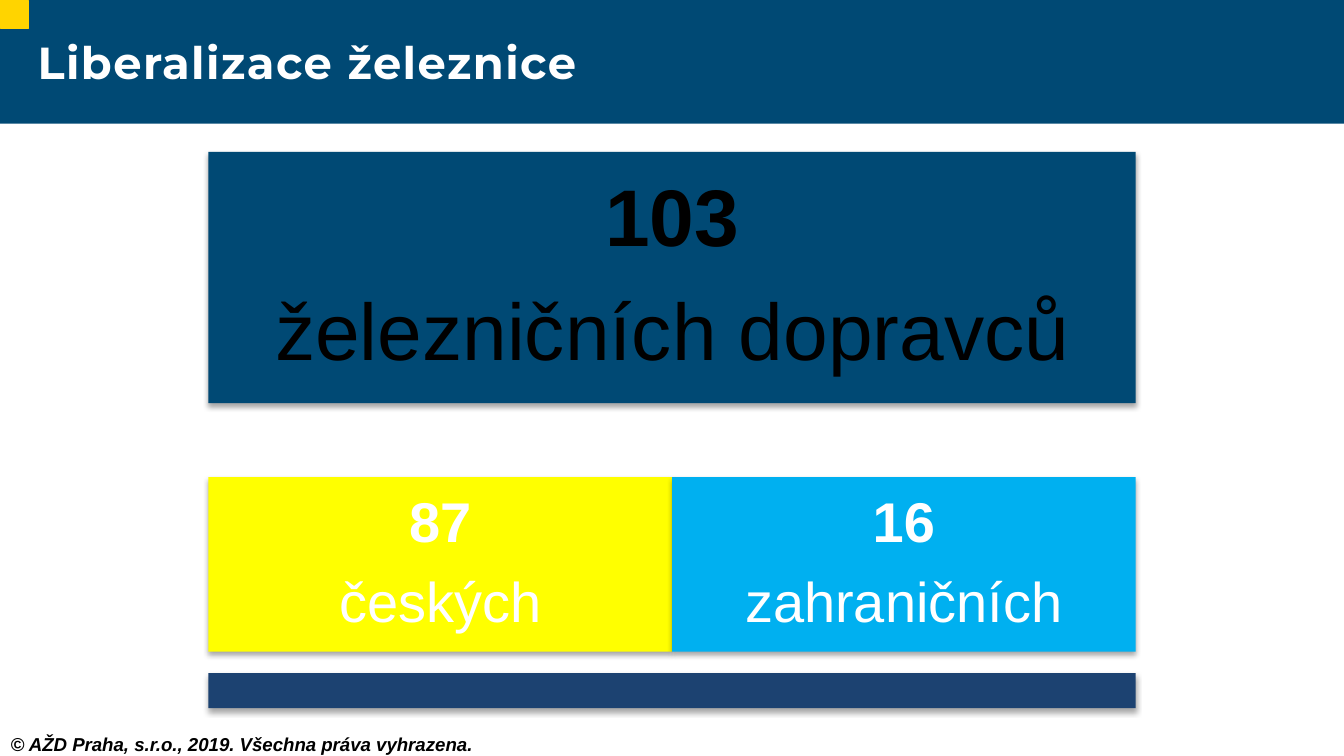
from dataclasses import dataclass

from lxml import etree
from pptx import Presentation
from pptx.dml.color import RGBColor
from pptx.enum.shapes import MSO_SHAPE
from pptx.enum.text import MSO_ANCHOR, PP_ALIGN
from pptx.oxml.ns import qn
from pptx.shapes.autoshape import Shape
from pptx.slide import Slide
from pptx.util import Inches, Pt

RECTANGLE = MSO_SHAPE.RECTANGLE
PROCESS = MSO_SHAPE.FLOWCHART_PROCESS
MIDDLE = MSO_ANCHOR.MIDDLE
BOTTOM = MSO_ANCHOR.BOTTOM
CENTER = PP_ALIGN.CENTER

NAVY = "004974"
GOLD = "FFD400"
WHITE = "FFFFFF"
BLACK = "000000"

BLOCK_LEFT = 1.55
BLOCK_WIDTH = 6.9
HALF_WIDTH = BLOCK_WIDTH / 2


@dataclass(frozen=True)
class Box:
    """Position and size in inches."""

    left: float
    top: float
    width: float
    height: float

    def lengths(self) -> tuple:
        """Return the four values as lengths."""
        return tuple(Inches(value) for value in (self.left, self.top, self.width, self.height))


@dataclass(frozen=True)
class Carriers:
    """A block with a number of carriers and their kind."""

    box: Box
    fill: str
    count: str
    kind: str
    size: float
    color: str
    margin: float


@dataclass(frozen=True)
class Label:
    """A single line of text on the slide."""

    box: Box
    text: str
    font: str
    size: float
    color: str
    anchor: MSO_ANCHOR
    margins: tuple
    italic: bool = False
    spacing: float = 0


CARRIERS = (
    Carriers(Box(BLOCK_LEFT, 1.13, BLOCK_WIDTH, 1.87), NAVY,
             "103", "železničních dopravců", 43, BLACK, 0.18),
    Carriers(Box(BLOCK_LEFT, 3.55, HALF_WIDTH, 1.3), "FFFF00",
             "87", "českých", 30, WHITE, 0.12),
    Carriers(Box(BLOCK_LEFT + HALF_WIDTH, 3.55, HALF_WIDTH, 1.3), "00B0F0",
             "16", "zahraničních", 30, WHITE, 0.12),
)

LABELS = (
    Label(Box(0, 5.41, 7.67, 0.21), "© AŽD Praha, s.r.o., 2019. Všechna práva vyhrazena.",
          "Arial", 10, BLACK, BOTTOM, (0.08, 0, 0.04, 0), italic=True),
    Label(Box(0.28, 0.06, 8.5, 0.79), "Liberalizace železnice",
          "Montserrat", 24, WHITE, MIDDLE, (0, 0.04, 0.1, 0.04), spacing=0.8),
)


def color(value: str) -> RGBColor:
    """Turn a hex string into a colour."""
    return RGBColor.from_string(value)


def set_frame(shape: Shape, margins: tuple, anchor: MSO_ANCHOR) -> None:
    """Set wrapping, insets and anchor of a shape's text."""
    frame = shape.text_frame
    frame.word_wrap = True
    frame.vertical_anchor = anchor
    frame.margin_left, frame.margin_top, frame.margin_right, frame.margin_bottom = (
        Inches(margin) for margin in margins
    )


def add_run(paragraph, text: str, font: str, size: float, hex_color: str, bold: bool):
    """Add a formatted run to a paragraph."""
    run = paragraph.add_run()
    run.text = text
    run.font.name = font
    run.font.size = Pt(size)
    run.font.bold = bold
    run.font.color.rgb = color(hex_color)
    return run


def add_block(slide: Slide, box: Box, fill: str, kind: MSO_SHAPE = RECTANGLE) -> Shape:
    """Add a plain filled shape without outline or shadow."""
    shape = slide.shapes.add_shape(kind, *box.lengths())
    shape.fill.solid()
    shape.fill.fore_color.rgb = color(fill)
    shape.line.fill.background()
    shape.shadow.inherit = False
    return shape


def add_shadow(shape: Shape) -> None:
    """Give a shape a soft shadow below it."""
    effects = shape._element.spPr.find(qn("a:effectLst"))
    shadow = etree.SubElement(
        effects, qn("a:outerShdw"), blurRad=str(Pt(3.1)), dist=str(Pt(1.8)),
        dir="5400000", rotWithShape="0",
    )
    tint = etree.SubElement(shadow, qn("a:srgbClr"), val=BLACK)
    etree.SubElement(tint, qn("a:alpha"), val="35000")


def add_carriers(slide: Slide, carriers: Carriers) -> None:
    """Add a shadowed block with a bold count above its kind."""
    shape = add_block(slide, carriers.box, carriers.fill)
    add_shadow(shape)
    set_frame(shape, (carriers.margin,) * 4, MIDDLE)
    frame = shape.text_frame
    lines = ((frame.paragraphs[0], carriers.count, True),
             (frame.add_paragraph(), carriers.kind, False))
    for paragraph, text, bold in lines:
        paragraph.alignment = CENTER
        paragraph.line_spacing = 0.9
        paragraph.space_after = Pt(0.35 * carriers.size)
        add_run(paragraph, text, "Arial", carriers.size, carriers.color, bold)


def add_label(slide: Slide, label: Label) -> None:
    """Add a text box with one bold line."""
    shape = slide.shapes.add_textbox(*label.box.lengths())
    set_frame(shape, label.margins, label.anchor)
    paragraph = shape.text_frame.paragraphs[0]
    run = add_run(paragraph, label.text, label.font, label.size, label.color, True)
    run.font.italic = label.italic
    if label.spacing:
        run.font._element.set("spc", str(round(label.spacing * 100)))


def main() -> None:
    """Build and save the presentation."""
    presentation = Presentation()
    presentation.slide_width = Inches(10)
    presentation.slide_height = Inches(10 * 9 / 16)
    slide = presentation.slides.add_slide(presentation.slide_layouts[6])

    add_block(slide, Box(0, 0, 10, 0.92), NAVY)
    corner = add_block(slide, Box(0, 0, 0.21, 0.21), GOLD, PROCESS)
    corner.line.color.rgb = color(GOLD)
    corner.line.width = Pt(0.5)
    for label in LABELS:
        add_label(slide, label)
    for carriers in CARRIERS:
        add_carriers(slide, carriers)
    add_shadow(add_block(slide, Box(BLOCK_LEFT, 5.01, BLOCK_WIDTH, 0.26), "1C4271"))

    presentation.save("out.pptx")


if __name__ == "__main__":
    main()
